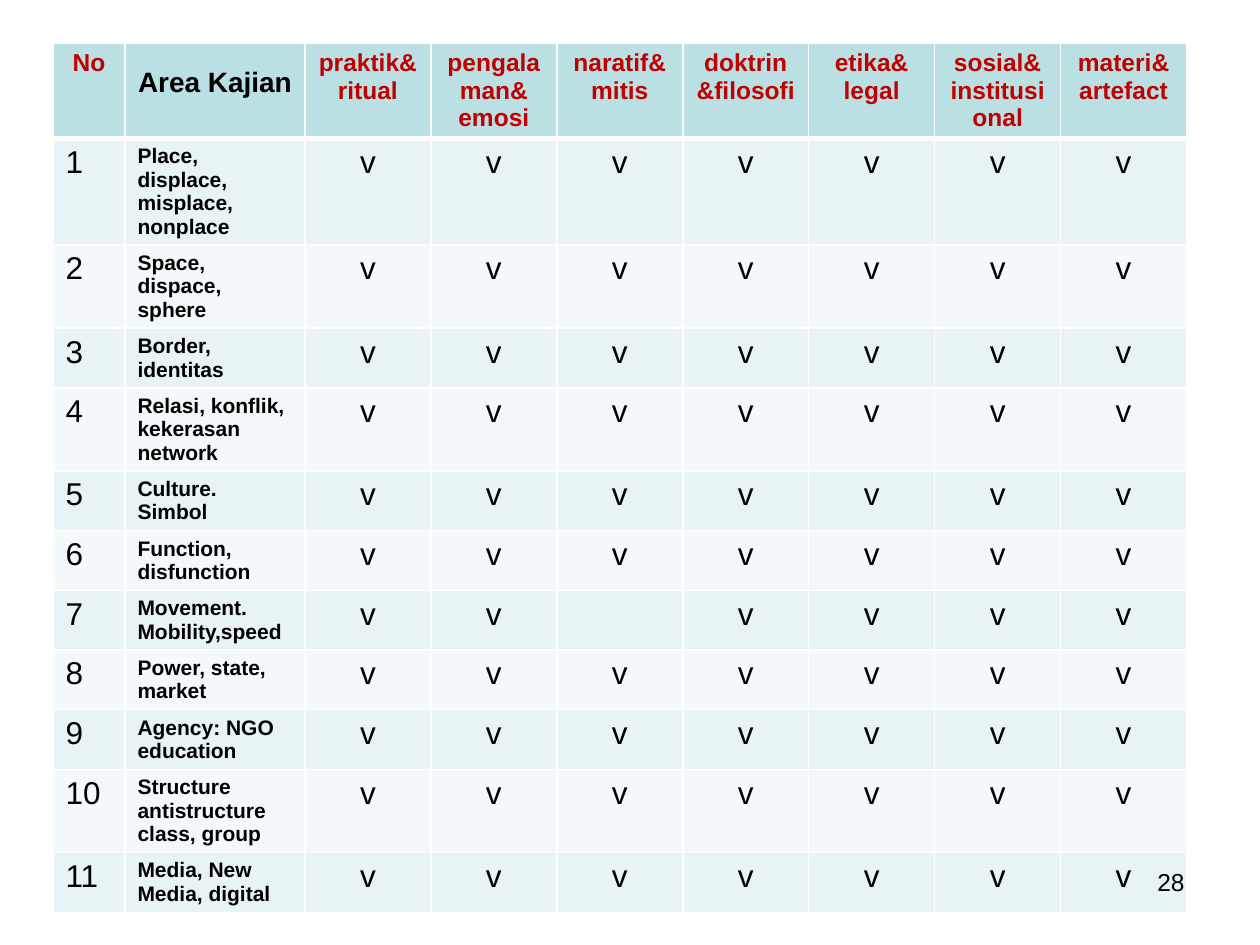
from lxml import etree
from pptx import Presentation
from pptx import util as u
from pptx.dml.color import RGBColor
from pptx.enum import text
from pptx.oxml import ns

HEADS = [
    "No", "Area Kajian", "praktik& ritual", "pengalaman& emosi",
    "naratif&mitis", "doktrin&filosofi", "etika& legal",
    "sosial& institusional", "materi& artefact",
]
AREAS = [
    "Place, displace, misplace, nonplace",
    "Space, dispace, sphere",
    "Border, identitas",
    "Relasi, konflik, kekerasan network",
    "Culture. Simbol",
    "Function, disfunction",
    "Movement. Mobility,speed",
    "Power, state, market",
    "Agency: NGO education",
    "Structure antistructure class, group",
    "Media, New Media, digital",
]
MARK = "v"
GAPS = {(7, "naratif&mitis")}  # area number and aspect left unmarked
PAGE = "28"

THEME = {
    "font": "Arial",
    "ink": "000000", "red": "C00000", "rule": "FFFFFF",
    "head": "BBE0E3", "bands": ("E7F3F4", "F3F9FA"),
    "aspect": 14, "title": 16, "area": 12, "mark": 18, "page": 14,
    "thin": 1, "thick": 3,
}

PX = u.Inches(1) // 126
SLIDE = (1260, 945)
GRID = (53, 43, 1134, 920)
WIDTHS = [72, 180] + [126] * 7
ROW = 53
DROP = 24  # top inset that lowers the area heading
FOOT = (903, 861, 294, 66)

LEFT, MID, RIGHT = (text.PP_ALIGN.LEFT, text.PP_ALIGN.CENTER,
                    text.PP_ALIGN.RIGHT)


def write(frame, words, size, color="ink", bold=False, align=LEFT):
    para = frame.paragraphs[0]
    para.alignment = align
    run = para.add_run()
    run.text = words
    font = run.font
    font.name, font.size, font.bold = THEME["font"], u.Pt(size), bold
    font.color.rgb = RGBColor.from_string(THEME[color])


def edge(cell, base):
    """Rule all four sides of a cell; base is the bottom width in points."""
    props = cell._tc.get_or_add_tcPr()
    thin = THEME["thin"]
    sides = [("lnL", thin), ("lnR", thin), ("lnT", thin), ("lnB", base)]
    for spot, (side, width) in enumerate(sides):
        line = etree.Element(ns.qn("a:" + side), w=str(u.Pt(width)))
        fill = etree.SubElement(line, ns.qn("a:solidFill"))
        etree.SubElement(fill, ns.qn("a:srgbClr"), val=THEME["rule"])
        props.insert(spot, line)


def paint(cell, color, base):
    cell.fill.solid()
    cell.fill.fore_color.rgb = RGBColor.from_string(color)
    edge(cell, base)


def fill_head(table):
    for col, head in enumerate(HEADS):
        cell = table.cell(0, col)
        paint(cell, THEME["head"], THEME["thick"])
        if head == "Area Kajian":
            cell.margin_top = DROP * PX
            write(cell.text_frame, head, THEME["title"], bold=True, align=MID)
        else:
            write(cell.text_frame, head, THEME["aspect"], "red", True, MID)


def fill_row(table, num, area):
    cells = [table.cell(num, col) for col in range(len(HEADS))]
    for cell in cells:
        paint(cell, THEME["bands"][(num - 1) % 2], THEME["thin"])
    write(cells[0].text_frame, str(num), THEME["mark"])
    write(cells[1].text_frame, area, THEME["area"], bold=True)
    for cell, head in zip(cells[2:], HEADS[2:]):
        if (num, head) not in GAPS:
            write(cell.text_frame, MARK, THEME["mark"], align=MID)


def add_grid(slide):
    box = [n * PX for n in GRID]
    frame = slide.shapes.add_table(len(AREAS) + 1, len(HEADS), *box)
    table = frame.table
    for col, width in zip(table.columns, WIDTHS):
        col.width = width * PX
    for row in table.rows:
        row.height = ROW * PX
    frame.height = box[3]
    fill_head(table)
    for num, area in enumerate(AREAS, 1):
        fill_row(table, num, area)


def add_page(slide):
    box = slide.shapes.add_textbox(*(n * PX for n in FOOT))
    box.text_frame.word_wrap = True
    write(box.text_frame, PAGE, THEME["page"], align=RIGHT)


def main():
    deck = Presentation()
    deck.slide_width, deck.slide_height = (n * PX for n in SLIDE)
    slide = deck.slides.add_slide(deck.slide_layouts.get_by_name("Blank"))
    add_grid(slide)
    add_page(slide)
    deck.save("out.pptx")


if __name__ == "__main__":
    main()
